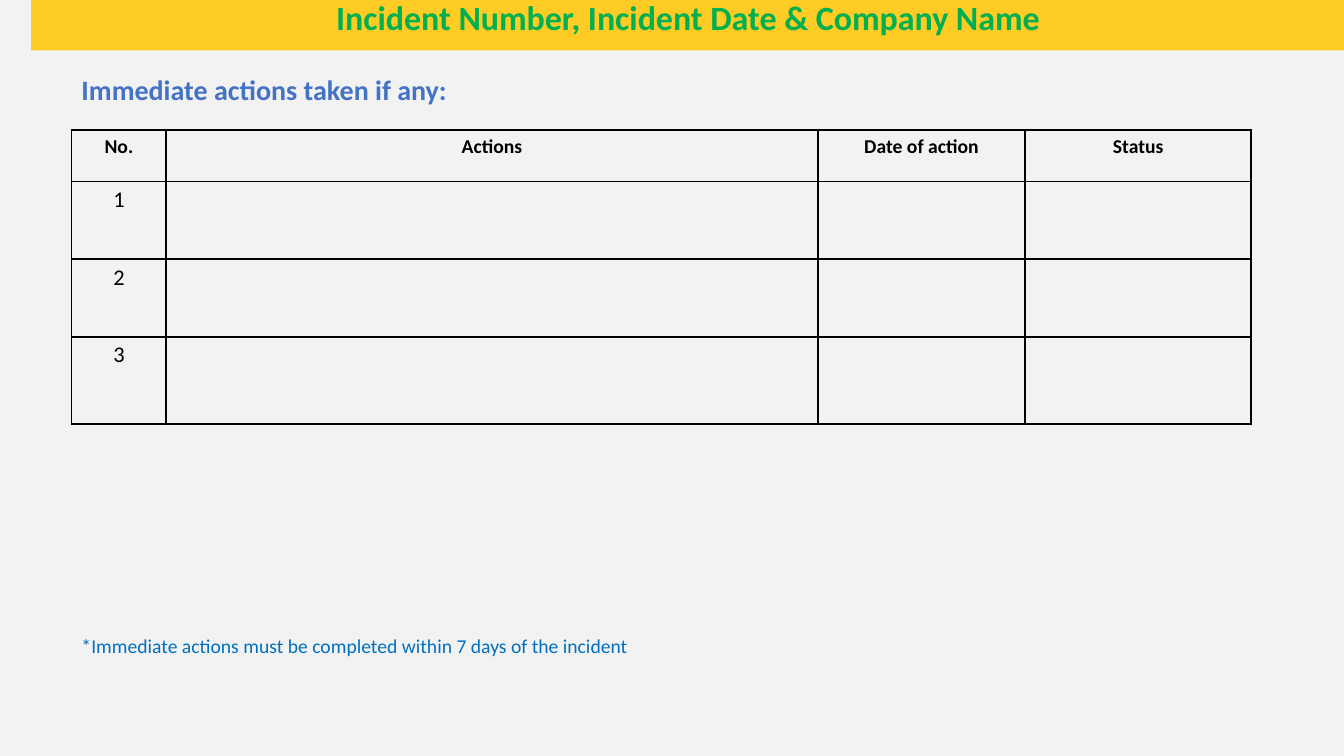
"""Build the incident slide listing the immediate actions taken."""
from lxml import etree
from pptx import Presentation
from pptx.dml.color import RGBColor
from pptx.enum.shapes import MSO_SHAPE
from pptx.enum.text import MSO_ANCHOR, PP_ALIGN
from pptx.oxml.ns import qn
from pptx.util import Inches, Pt

RECTANGLE = MSO_SHAPE.RECTANGLE
LEFT, CENTER = PP_ALIGN.LEFT, PP_ALIGN.CENTER
TOP, MIDDLE = MSO_ANCHOR.TOP, MSO_ANCHOR.MIDDLE

TITLE = "Incident Number, Incident Date & Company Name"
HEADING = "Immediate actions taken if any:"
FOOTNOTE = "*Immediate actions must be completed within 7 days of the incident"
ACTIONS = [
    ("No.", "Actions", "Date of action", "Status"),
    ("1", "", "", ""),
    ("2", "", "", ""),
    ("3", "", "", ""),
]
COLUMN_WIDTHS = (0.94, 6.46, 2.06, 2.24)
ROW_HEIGHTS = (0.51, 0.77, 0.77, 0.87)
MARGIN = 0.71

THEME = {
    "font": "Calibri",
    "background": "F2F2F2",
    "banner": "FFCB25",
    "title": "00B050",
    "heading": "4472C4",
    "footnote": "0070C0",
    "ink": "000000",
    "title_size": 24.3,
    "heading_size": 20,
    "header_size": 14,
    "number_size": 16,
    "footnote_size": 14,
    "border": 1.5,
}


def color(role):
    return RGBColor.from_string(THEME[role])


def write(frame, text, *, size, ink, bold=False, align=LEFT, anchor=TOP, spacing=None):
    frame.word_wrap = True
    frame.vertical_anchor = anchor
    paragraph = frame.paragraphs[0]
    paragraph.alignment = align
    paragraph.line_spacing = spacing
    run = paragraph.add_run()
    run.text = text
    run.font.name = THEME["font"]
    run.font.size = Pt(THEME[size])
    run.font.bold = bold
    run.font.color.rgb = color(ink)


def add_borders(cell):
    properties = cell._tc.get_or_add_tcPr()
    for position, side in enumerate(("a:lnL", "a:lnR", "a:lnT", "a:lnB")):
        line = etree.Element(qn(side), w=str(Pt(THEME["border"])))
        fill = etree.SubElement(line, qn("a:solidFill"))
        etree.SubElement(fill, qn("a:srgbClr"), val=THEME["ink"])
        properties.insert(position, line)


def add_banner(slide):
    banner = slide.shapes.add_shape(
        RECTANGLE, Inches(0.31), Inches(0), Inches(13.03), Inches(0.5))
    banner.shadow.inherit = False
    banner.fill.solid()
    banner.fill.fore_color.rgb = color("banner")
    banner.line.fill.background()
    frame = banner.text_frame
    frame.margin_top, frame.margin_bottom = Inches(0), Inches(0.12)
    write(frame, TITLE, size="title_size", ink="title", bold=True,
          align=CENTER, anchor=MIDDLE, spacing=0.9)


def add_label(slide, text, top, width, height, **style):
    label = slide.shapes.add_textbox(
        Inches(MARGIN), Inches(top), Inches(width), Inches(height))
    write(label.text_frame, text, **style)


def add_actions(slide):
    table = slide.shapes.add_table(
        len(ROW_HEIGHTS), len(COLUMN_WIDTHS), Inches(MARGIN), Inches(1.29),
        Inches(sum(COLUMN_WIDTHS)), Inches(sum(ROW_HEIGHTS))).table
    table.first_row = table.horz_banding = False
    for column, width in zip(table.columns, COLUMN_WIDTHS):
        column.width = Inches(width)
    for row_index, (values, height) in enumerate(zip(ACTIONS, ROW_HEIGHTS)):
        table.rows[row_index].height = Inches(height)
        is_header = row_index == 0
        for column_index, value in enumerate(values):
            cell = table.cell(row_index, column_index)
            cell.fill.background()
            add_borders(cell)
            if value:
                write(cell.text_frame, value, ink="ink", bold=is_header, align=CENTER,
                      size="header_size" if is_header else "number_size")


def main():
    deck = Presentation()
    deck.slide_width, deck.slide_height = Inches(13.33), Inches(7.5)
    slide = deck.slides.add_slide(deck.slide_layouts[6])
    slide.background.fill.solid()
    slide.background.fill.fore_color.rgb = color("background")
    add_banner(slide)
    add_label(slide, HEADING, 0.67, 4.41, 0.5,
              size="heading_size", ink="heading", bold=True)
    add_actions(slide)
    add_label(slide, FOOTNOTE, 6.24, 8.08, 0.34,
              size="footnote_size", ink="footnote")
    deck.save("out.pptx")


if __name__ == "__main__":
    main()
